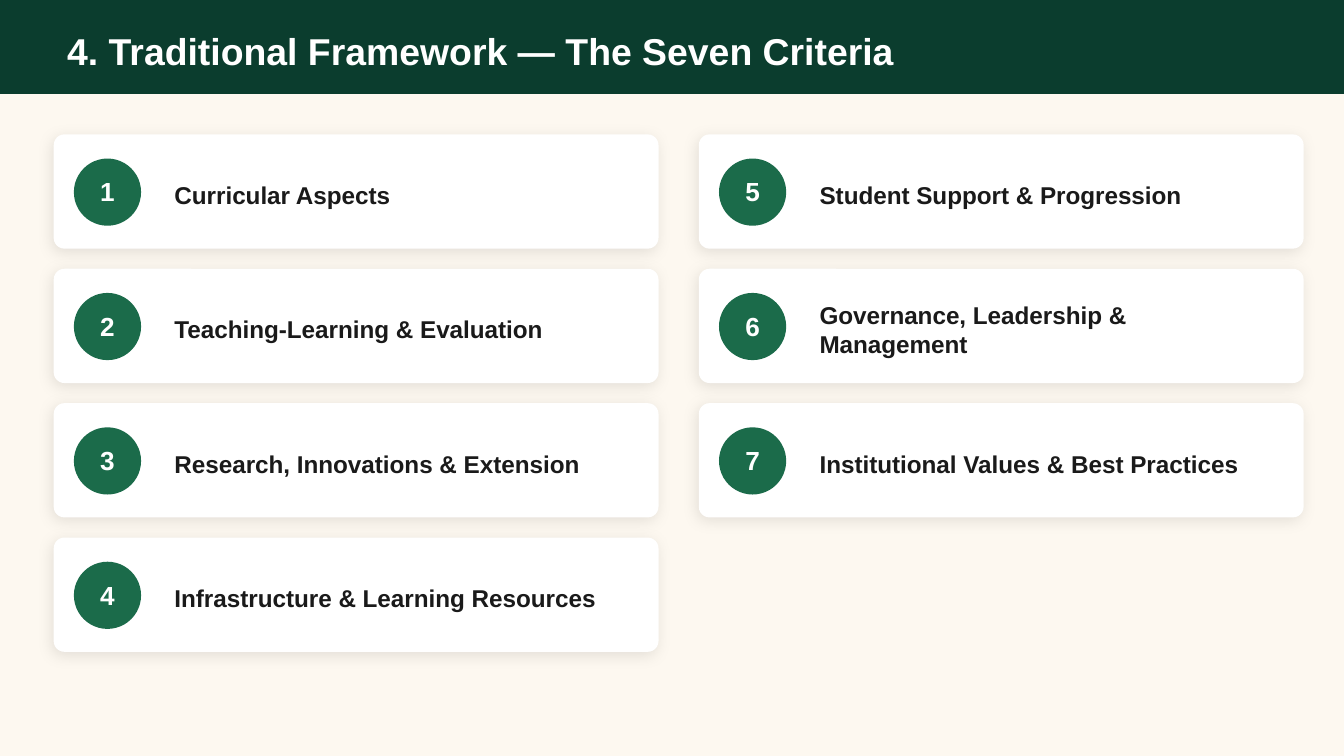
import pptx
import pptx.dml.color
import pptx.enum.shapes
import pptx.enum.text
import pptx.oxml
import pptx.oxml.ns
import pptx.util

RGBColor = pptx.dml.color.RGBColor
SHAPE = pptx.enum.shapes.MSO_SHAPE
ALIGN = pptx.enum.text.PP_ALIGN

PX = 4572  # EMU per px, 200 px to the inch
SLIDE_WIDTH, SLIDE_HEIGHT = 2000, 1125

CREAM = RGBColor(0xFD, 0xF8, 0xF0)
DARK_GREEN = RGBColor(0x0B, 0x3D, 0x2E)
GREEN = RGBColor(0x1B, 0x6B, 0x4A)
WHITE = RGBColor(0xFF, 0xFF, 0xFF)
INK = RGBColor(0x1A, 0x1A, 0x1A)

TITLE = "4. Traditional Framework — The Seven Criteria"
CRITERIA = [
    "Curricular Aspects",
    "Teaching-Learning & Evaluation",
    "Research, Innovations & Extension",
    "Infrastructure & Learning Resources",
    "Student Support & Progression",
    "Governance, Leadership & Management",
    "Institutional Values & Best Practices",
]

# Card grid, filled column by column
ROWS = 4
GRID_LEFT, GRID_TOP = 80, 200
COLUMN_STEP, ROW_STEP = 960, 200
CARD_WIDTH, CARD_HEIGHT = 900, 170

CARD_SHADOW = (
    f"<a:effectLst {pptx.oxml.ns.nsdecls('a')}>"
    '<a:outerShdw blurRad="101600" dist="25400" dir="8100000" algn="bl" rotWithShape="0">'
    '<a:srgbClr val="000000"><a:alpha val="10000"/></a:srgbClr>'
    "</a:outerShdw></a:effectLst>"
)


def px(*lengths):
    return [pptx.util.Emu(length * PX) for length in lengths]


def add_filled_shape(slide, preset, box, color):
    shape = slide.shapes.add_shape(preset, *px(*box))
    shape.shadow.inherit = False
    shape.fill.solid()
    shape.fill.fore_color.rgb = color
    shape.line.fill.background()
    return shape


def write_text(holder, text, size, color, alignment=ALIGN.LEFT):
    frame = holder.text_frame
    frame.word_wrap = True
    frame.auto_size = pptx.enum.text.MSO_AUTO_SIZE.NONE
    frame.vertical_anchor = pptx.enum.text.MSO_ANCHOR.MIDDLE
    frame.text = text
    paragraph = frame.paragraphs[0]
    paragraph.alignment = alignment
    paragraph.font.name = "Arial"
    paragraph.font.size = pptx.util.Pt(size)
    paragraph.font.bold = True
    paragraph.font.color.rgb = color


def add_label(slide, box, text, size, color, alignment=ALIGN.LEFT):
    write_text(slide.shapes.add_textbox(*px(*box)), text, size, color, alignment)


def add_header(slide):
    add_filled_shape(slide, SHAPE.RECTANGLE, (0, 0, SLIDE_WIDTH, 140), DARK_GREEN)
    title = slide.shapes.title
    title.left, title.top, title.width, title.height = px(80, 36, 1800, 80)
    write_text(title, TITLE, 20, WHITE)
    # Bring the title in front of the band
    slide.shapes._spTree.append(title._element)


def add_card(slide, left, top, number, criterion):
    card = add_filled_shape(slide, SHAPE.ROUNDED_RECTANGLE,
                            (left, top, CARD_WIDTH, CARD_HEIGHT), WHITE)
    card.adjustments[0] = 0.094
    properties = card._element.spPr
    properties.remove(properties.find(pptx.oxml.ns.qn("a:effectLst")))
    properties.append(pptx.oxml.parse_xml(CARD_SHADOW))

    # Numbered badge and criterion name
    add_filled_shape(slide, SHAPE.OVAL, (left + 30, top + 36, 100, 100), GREEN)
    add_label(slide, (left + 30, top + 50, 100, 70), str(number), 14, WHITE, ALIGN.CENTER)
    add_label(slide, (left + 160, top + 50, 700, 80), criterion, 13, INK)


def main():
    deck = pptx.Presentation()
    deck.slide_width, deck.slide_height = px(SLIDE_WIDTH, SLIDE_HEIGHT)
    slide = deck.slides.add_slide(deck.slide_layouts[5])  # Title Only
    slide.background.fill.solid()
    slide.background.fill.fore_color.rgb = CREAM

    add_header(slide)
    for index, criterion in enumerate(CRITERIA):
        column, row = divmod(index, ROWS)
        add_card(slide, GRID_LEFT + column * COLUMN_STEP, GRID_TOP + row * ROW_STEP,
                 index + 1, criterion)
    deck.save("out.pptx")


if __name__ == "__main__":
    main()
